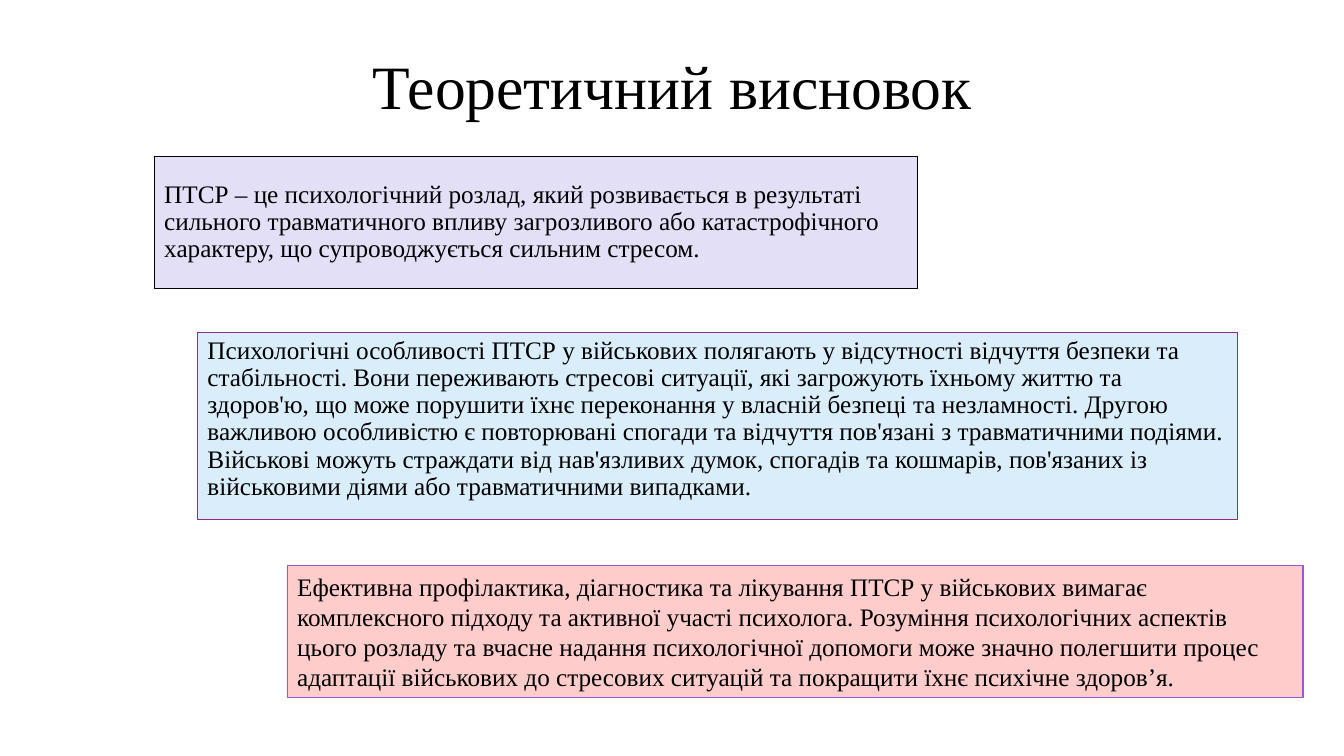
from pptx import Presentation
from pptx.dml.color import RGBColor
from pptx.enum.shapes import MSO_SHAPE
from pptx.enum.text import MSO_ANCHOR, PP_ALIGN
from pptx.util import Cm, Pt

BLACK = RGBColor(0x00, 0x00, 0x00)
LAVENDER = RGBColor(0xE3, 0xDF, 0xF7)
SKY = RGBColor(0xDA, 0xED, 0xFB)
ROSE = RGBColor(0xFF, 0xCC, 0xCC)
PLUM = RGBColor(0x92, 0x27, 0x8F)
VIOLET = RGBColor(0x9B, 0x57, 0xD3)


def write(shape, wording, size, align, anchor, spacing):
    frame = shape.text_frame
    frame.word_wrap = True
    frame.vertical_anchor = anchor
    frame.text = wording
    paragraph = frame.paragraphs[0]
    paragraph.alignment = align
    paragraph.line_spacing = spacing
    font = paragraph.runs[0].font
    font.name = "Times New Roman"
    font.size = Pt(size)
    font.color.rgb = BLACK


prs = Presentation()
prs.slide_width, prs.slide_height = Cm(33.87), Cm(19.05)
slide = prs.slides.add_slide(prs.slide_layouts[6])

heading = slide.shapes.add_textbox(Cm(2.34), Cm(1.02), Cm(29.21), Cm(2.49))
write(heading, "Теоретичний висновок", 44, PP_ALIGN.CENTER, MSO_ANCHOR.MIDDLE, 0.9)

# left, top, width, height (cm), fill, outline, anchor, line spacing, wording
conclusions = [
    (3.89, 3.94, 19.23, 3.33, LAVENDER, BLACK, MSO_ANCHOR.MIDDLE, 0.9,
     "ПТСР – це психологічний розлад, який розвивається в результаті сильного "
     "травматичного впливу загрозливого або катастрофічного характеру, що "
     "супроводжується сильним стресом."),
    (4.98, 8.38, 26.21, 4.72, SKY, PLUM, MSO_ANCHOR.TOP, 0.9,
     "Психологічні особливості ПТСР у військових полягають у відсутності відчуття "
     "безпеки та стабільності. Вони переживають стресові ситуації, які загрожують "
     "їхньому життю та здоров'ю, що може порушити їхнє переконання у власній безпеці "
     "та незламності. Другою важливою особливістю є повторювані спогади та відчуття "
     "пов'язані з травматичними подіями. Військові можуть страждати від нав'язливих "
     "думок, спогадів та кошмарів, пов'язаних із військовими діями або травматичними "
     "випадками."),
    (7.24, 14.25, 25.6, 3.33, ROSE, VIOLET, MSO_ANCHOR.MIDDLE, 1.0,
     "Ефективна профілактика, діагностика та лікування ПТСР у військових вимагає "
     "комплексного підходу та активної участі психолога. Розуміння психологічних "
     "аспектів цього розладу та вчасне надання психологічної допомоги може значно "
     "полегшити процес адаптації військових до стресових ситуацій та покращити їхнє "
     "психічне здоров’я."),
]
for left, top, width, height, fill, outline, anchor, spacing, wording in conclusions:
    conclusion = slide.shapes.add_shape(
        MSO_SHAPE.RECTANGLE, Cm(left), Cm(top), Cm(width), Cm(height))
    conclusion.shadow.inherit = False
    conclusion.fill.solid()
    conclusion.fill.fore_color.rgb = fill
    conclusion.line.color.rgb = outline
    conclusion.line.width = Pt(1)
    write(conclusion, wording, 18, PP_ALIGN.LEFT, anchor, spacing)

prs.save("out.pptx")
